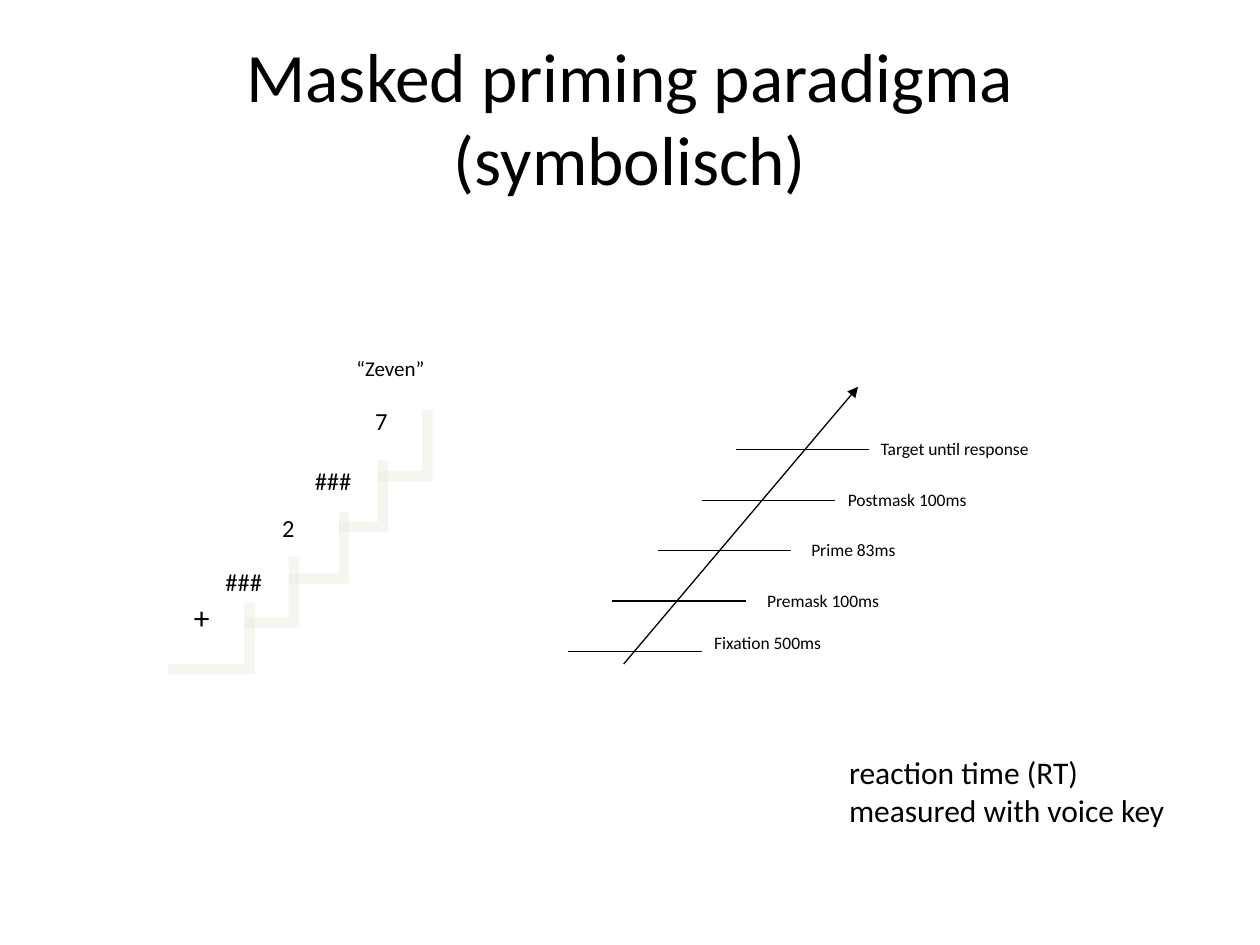
from dataclasses import dataclass

from lxml.etree import SubElement
from pptx import Presentation
from pptx.dml.color import RGBColor
from pptx.enum.shapes import MSO_CONNECTOR as CONN, MSO_SHAPE as SHAPE
from pptx.enum.text import MSO_ANCHOR as ANCHOR, MSO_AUTO_SIZE as AUTO, PP_ALIGN as ALIGN
from pptx.oxml.ns import qn
from pptx.util import Inches, Pt


@dataclass(frozen=True)
class Theme:
    font: str = "Calibri"
    ink: RGBColor = RGBColor(0x00, 0x00, 0x00)
    paper: RGBColor = RGBColor(0xFF, 0xFF, 0xFF)
    shadow: str = "EEECE1"
    title: float = 39.6
    note: float = 18
    fixation: float = 18
    stimulus: float = 14
    response: float = 12
    label: float = 10
    line: float = 0.75


THEME = Theme()
TITLE = ["Masked priming paradigma", "(symbolisch)"]
NOTE = ["reaction time (RT)", "measured with voice key"]
AXIS = (4.95, 5.27, 6.81, 3.07)
TICK_TOP, TICK_STEP, TICK_WIDTH = 3.57, 0.4, 1.06
FRAME_SIZE = (0.69, 0.57)
PHASES = [
    (5.84, "Target until response", (6.89, 3.43, 1.69, 0.34)),
    (5.57, "Postmask 100ms", (6.63, 3.83, 1.41, 0.34)),
    (5.22, "Prime 83ms", (6.34, 4.23, 1.05, 0.34)),
    (4.86, "Premask 100ms", (5.99, 4.63, 1.34, 0.34)),
    (4.51, "Fixation 500ms", (5.57, 4.97, 1.27, 0.34)),
]
STIMULI = [
    ((2.66, 3.17), "7", (2.88, 3.17, 0.37, 0.42), THEME.stimulus),
    ((2.31, 3.57), "###", (2.4, 3.65, 0.67, 0.42), THEME.stimulus),
    ((2, 3.98), "2", (2.14, 4.02, 0.37, 0.42), THEME.stimulus),
    ((1.6, 4.33), "###", (1.69, 4.45, 0.61, 0.42), THEME.stimulus),
    ((1.25, 4.7), "+", (1.44, 4.7, 0.37, 0.51), THEME.fixation),
]


def inches(values):
    """Convert a row of numbers to lengths."""
    return [Inches(v) for v in values]


def add_run(p, text, size):
    """Append one styled run to a paragraph."""
    r = p.add_run()
    r.text = text
    r.font.name, r.font.size = THEME.font, Pt(size)
    r.font.color.rgb = THEME.ink


def set_title(slide, lines):
    """Place the title and fill it line by line."""
    s = slide.shapes.title
    s.left, s.top, s.width, s.height = inches((0.5, 0.3, 9, 1.25))
    tf = s.text_frame
    tf.auto_size, tf.vertical_anchor = AUTO.NONE, ANCHOR.MIDDLE
    p = tf.paragraphs[0]
    p.alignment = ALIGN.CENTER
    for i, line in enumerate(lines):
        if i:
            p.add_line_break()
        add_run(p, line, THEME.title)


def add_text(slide, lines, box, size, wrap=False):
    """Add a text box with one paragraph per line."""
    tf = slide.shapes.add_textbox(*inches(box)).text_frame
    tf.word_wrap, tf.auto_size = wrap, AUTO.SHAPE_TO_FIT_TEXT
    for i, line in enumerate(lines):
        p = tf.add_paragraph() if i else tf.paragraphs[0]
        add_run(p, line, size)


def add_line(slide, ends, arrow=False):
    """Add a thin straight line, with an arrowhead if wanted."""
    s = slide.shapes.add_connector(CONN.STRAIGHT, *inches(ends))
    s.line.color.rgb, s.line.width = THEME.ink, Pt(THEME.line)
    if arrow:
        SubElement(s.line._get_or_add_ln(), qn("a:tailEnd"), type="triangle")
    SubElement(s._element.spPr, qn("a:effectLst"))


def add_frame(slide, corner):
    """Add a white screen with a hard offset shadow."""
    s = slide.shapes.add_shape(SHAPE.RECTANGLE, *inches(corner + FRAME_SIZE))
    s.fill.solid()
    s.fill.fore_color.rgb = THEME.paper
    s.line.fill.background()
    s.shadow.inherit = False
    effects = s._element.spPr.find(qn("a:effectLst"))
    shadow = SubElement(effects, qn("a:outerShdw"), blurRad="0", dist=str(Pt(8.5)),
                        dir=str(45 * 60000), algn="ctr", rotWithShape="0")
    color = SubElement(shadow, qn("a:srgbClr"), val=THEME.shadow)
    SubElement(color, qn("a:alpha"), val="50000")


def add_timeline(slide):
    """Draw the time arrow with its labelled phases."""
    add_line(slide, AXIS, arrow=True)
    for i, (left, label, box) in enumerate(PHASES):
        y = TICK_TOP + i * TICK_STEP
        add_line(slide, (left, y, left + TICK_WIDTH, y))
        add_text(slide, [label], box, THEME.label)


def add_stimuli(slide):
    """Draw the spoken response and the staircase of screens."""
    add_text(slide, ["“Zeven”"], (2.73, 2.77, 0.74, 0.3), THEME.response)
    for corner, text, box, size in STIMULI:
        add_frame(slide, corner)
        add_text(slide, [text], box, size, wrap=True)


def main():
    """Build and save the slide."""
    prs = Presentation()
    prs.slide_width, prs.slide_height = inches((10, 7.5))
    slide = prs.slides.add_slide(prs.slide_layouts[5])
    set_title(slide, TITLE)
    add_timeline(slide)
    add_stimuli(slide)
    add_text(slide, NOTE, (6.64, 5.93, 2.74, 0.71), THEME.note)
    prs.save("out.pptx")


if __name__ == "__main__":
    main()
